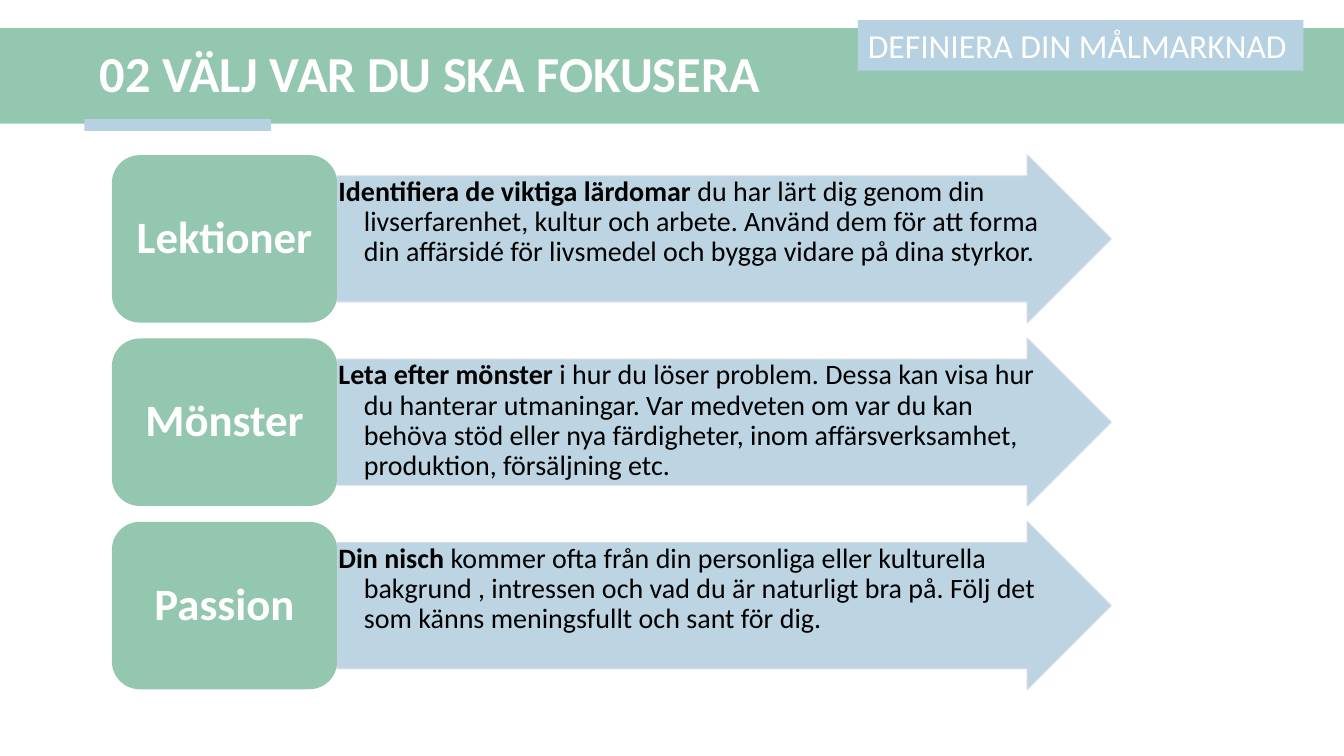
"""Builds the slide on choosing where to focus, with three labelled arrows."""
from lxml import etree
from pptx import Presentation
from pptx.dml.color import RGBColor
from pptx.enum.shapes import MSO_SHAPE
from pptx.enum.text import MSO_ANCHOR, MSO_AUTO_SIZE, PP_ALIGN
from pptx.oxml.ns import qn
from pptx.util import Cm, Pt

RECTANGLE, ROUNDED, ARROW = MSO_SHAPE.RECTANGLE, MSO_SHAPE.ROUNDED_RECTANGLE, MSO_SHAPE.RIGHT_ARROW
LEFT, CENTER = PP_ALIGN.LEFT, PP_ALIGN.CENTER
TOP, MIDDLE = MSO_ANCHOR.TOP, MSO_ANCHOR.MIDDLE
COLORS = {"green": "94C7B0", "blue": "B6D1E1", "edge": "CFD5EA", "white": "FFFFFF", "black": "000000"}
ROWS = [
    ("Lektioner", "Identifiera de viktiga lärdomar ",
     "du har lärt dig genom din livserfarenhet, kultur och arbete. Använd dem för att forma "
     "din affärsidé för livsmedel och bygga vidare på dina styrkor."),
    ("Mönster", "Leta efter mönster ",
     "i hur du löser problem. Dessa kan visa hur du hanterar utmaningar. Var medveten om var "
     "du kan behöva stöd eller nya färdigheter, inom affärsverksamhet, produktion, försäljning etc."),
    ("Passion", "Din nisch ",
     "kommer ofta från din personliga eller kulturella bakgrund , intressen och vad du är "
     "naturligt bra på. Följ det som känns meningsfullt och sant för dig."),
]
ROW_TOP, ROW_STEP, ROW_HEIGHT = 3.91, 4.62, 4.22
LABEL_LEFT, LABEL_WIDTH, ARROW_WIDTH = 2.82, 5.68, 19.5


def add_block(kind, left, top, width, height, color):
    """Adds a plain filled shape, placed in centimetres."""
    block = page.shapes.add_shape(kind, Cm(left), Cm(top), Cm(width), Cm(height))
    block.shadow.inherit = False
    block.fill.solid()
    block.fill.fore_color.rgb = RGBColor.from_string(COLORS[color])
    block.line.fill.background()
    return block


def write(box, *texts, size, color="white", bold=True, align=LEFT, anchor=MIDDLE,
          spacing=0.9, inset=None, hanging=0, wrap=True):
    """Writes one paragraph whose first span may be bold."""
    frame = box.text_frame
    frame.auto_size = MSO_AUTO_SIZE.NONE
    frame.word_wrap = wrap
    frame.vertical_anchor = anchor
    if inset is not None:
        frame.margin_left = frame.margin_right = frame.margin_top = frame.margin_bottom = Cm(inset)
    para = frame.paragraphs[0]
    para.alignment = align
    para.line_spacing = spacing
    para.space_before = Pt(0)
    if hanging:
        properties = para._p.get_or_add_pPr()
        properties.set("marL", str(Cm(hanging)))
        properties.set("indent", str(-Cm(hanging)))
    for index, text in enumerate(texts):
        span = para.add_run()
        span.text = text
        span.font.name = "Calibri"
        span.font.size = Pt(size)
        span.font.bold = bold and index == 0
        span.font.color.rgb = RGBColor.from_string(COLORS[color])


deck = Presentation()
deck.slide_width, deck.slide_height = Cm(33.87), Cm(19.05)
page = deck.slides.add_slide(deck.slide_layouts[5])

add_block(RECTANGLE, 0, 0.71, 33.87, 2.41, "green")
accent = add_block(RECTANGLE, 2.13, 3, 4.7, 0.3, "blue")

title = page.shapes.title
title.left, title.top, title.width, title.height = Cm(2.26), Cm(0.91), Cm(30.3), Cm(2.01)
write(title, "02 VÄLJ VAR DU SKA FOKUSERA", size=36)
accent.element.addnext(title.element)

tag = add_block(RECTANGLE, 21.62, 0.51, 11.23, 1.27, "blue")
write(tag, "DEFINIERA DIN MÅLMARKNAD", size=24, bold=False, spacing=1.0, wrap=False)

for index, (name, lead, detail) in enumerate(ROWS):
    top = ROW_TOP + index * ROW_STEP
    arrow = add_block(ARROW, LABEL_LEFT + LABEL_WIDTH, top, ARROW_WIDTH, ROW_HEIGHT, "blue")
    arrow.adjustments[0], arrow.adjustments[1] = 0.75, 0.5
    arrow.line.color.rgb = RGBColor.from_string(COLORS["edge"])
    arrow.line.width = Pt(1)
    for paint in arrow.element.spPr.iter(qn("a:srgbClr")):
        etree.SubElement(paint, qn("a:alpha")).set("val", "90000")
    write(arrow, lead, detail, size=20, color="black", anchor=TOP, inset=0.03, hanging=0.64)

    label = add_block(ROUNDED, LABEL_LEFT, top, LABEL_WIDTH, ROW_HEIGHT, "green")
    write(label, name, size=32, align=CENTER, inset=0.2)

deck.save("out.pptx")
